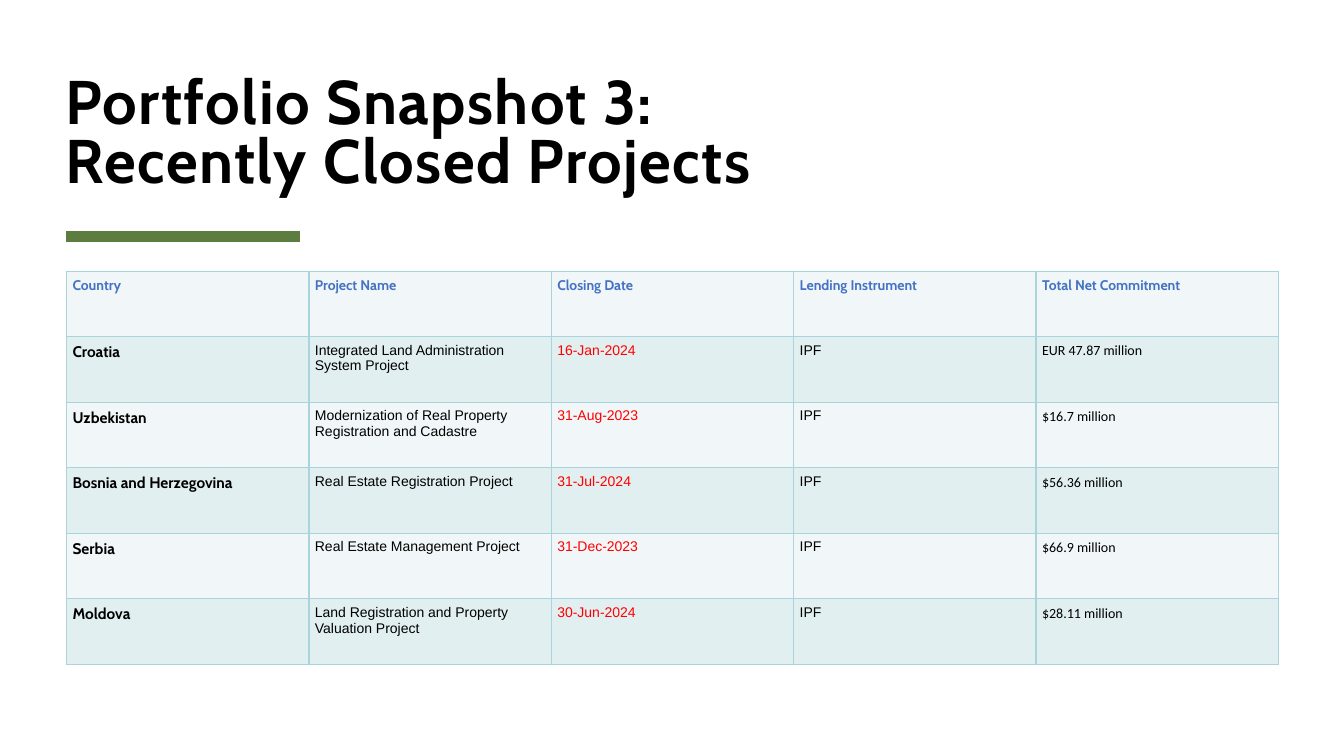
from dataclasses import dataclass

from lxml import etree
from pptx import Presentation
from pptx.dml.color import RGBColor
from pptx.enum.shapes import MSO_CONNECTOR
from pptx.enum.text import MSO_ANCHOR, MSO_AUTO_SIZE, PP_ALIGN
from pptx.oxml import parse_xml
from pptx.oxml.ns import nsdecls, qn
from pptx.slide import Slide
from pptx.table import _Cell
from pptx.util import Inches, Pt

STRAIGHT = MSO_CONNECTOR.STRAIGHT
BOTTOM = MSO_ANCHOR.BOTTOM
LEFT = PP_ALIGN.LEFT
NO_AUTOFIT = MSO_AUTO_SIZE.NONE

BORDER = "A9D4DB"
ROW_FILLS = ("F1F7F8", "E2EFF1")
ROW_HEIGHT = 0.65
TABLE_WIDTH = 12.02
CELL_INSET = 0.06


@dataclass(frozen=True)
class TextStyle:
    """Describe the lettering of a paragraph."""

    font: str
    size: int
    color: str = "000000"
    bold: bool = False


@dataclass(frozen=True)
class Project:
    """Hold one closed project, in column order."""

    country: str
    name: str
    closing_date: str
    instrument: str
    commitment: str

    def values(self) -> tuple[str, ...]:
        """Return the texts of the project's row."""
        return (self.country, self.name, self.closing_date, self.instrument, self.commitment)


TITLE_STYLE = TextStyle("Cabin", 44, bold=True)
HEADER_STYLE = TextStyle("Cabin", 10, "4472C4", True)
COLUMN_STYLES = (
    TextStyle("Cabin", 11, bold=True),
    TextStyle("Arial", 10),
    TextStyle("Arial", 10, "FF0000"),
    TextStyle("Arial", 10),
    TextStyle("Calibri", 10),
)
HEADERS = ("Country", "Project Name", "Closing Date", "Lending Instrument", "Total Net Commitment")
PROJECTS = (
    Project("Croatia", "Integrated Land Administration System Project",
            "16-Jan-2024", "IPF", "EUR 47.87 million"),
    Project("Uzbekistan", "Modernization of Real Property Registration and Cadastre",
            "31-Aug-2023", "IPF", "$16.7 million"),
    Project("Bosnia and Herzegovina", "Real Estate Registration Project",
            "31-Jul-2024", "IPF", "$56.36 million"),
    Project("Serbia", "Real Estate Management Project",
            "31-Dec-2023", "IPF", "$66.9 million"),
    Project("Moldova", "Land Registration and Property Valuation Project",
            "30-Jun-2024", "IPF", "$28.11 million"),
)


def rgb(color: str) -> RGBColor:
    """Turn a hex string into a colour."""
    return RGBColor.from_string(color)


def style_paragraph(paragraph, style: TextStyle) -> None:
    """Apply a text style to a whole paragraph."""
    paragraph.alignment = LEFT
    font = paragraph.font
    font.name = style.font
    font.size = Pt(style.size)
    font.bold = style.bold
    font.color.rgb = rgb(style.color)


def add_title(slide: Slide) -> None:
    """Place and format the title."""
    title = slide.shapes.title
    title.left, title.top = Inches(0.65), Inches(0.64)
    title.width, title.height = Inches(12), Inches(1.3)
    frame = title.text_frame
    frame.text = "Portfolio Snapshot 3:\vRecently Closed Projects"
    frame.word_wrap = True
    frame.auto_size = NO_AUTOFIT
    frame.vertical_anchor = BOTTOM
    frame.margin_left = frame.margin_right = frame.margin_top = frame.margin_bottom = 0
    heading = frame.paragraphs[0]
    style_paragraph(heading, TITLE_STYLE)
    heading.line_spacing = 0.8
    for run in heading.runs:
        run._r.get_or_add_rPr().set("spc", "100")


def add_accent_rule(slide: Slide) -> None:
    """Draw the green rule below the title."""
    rule = slide.shapes.add_connector(
        STRAIGHT, Inches(0.65), Inches(2.35), Inches(2.98), Inches(2.35))
    rule.line.color.rgb = rgb("5D7D40")
    rule.line.width = Pt(8)
    etree.SubElement(rule._element.spPr, qn("a:effectLst"))


def add_borders(cell: _Cell) -> None:
    """Outline all four sides of a cell."""
    properties = cell._tc.get_or_add_tcPr()
    for position, side in enumerate(("lnL", "lnR", "lnT", "lnB")):
        properties.insert(position, parse_xml(
            f'<a:{side} {nsdecls("a")} w="{Pt(1)}"><a:solidFill>'
            f'<a:srgbClr val="{BORDER}"/></a:solidFill></a:{side}>'))


def fill_cell(cell: _Cell, text: str, style: TextStyle, fill: str) -> None:
    """Write and format one table cell."""
    cell.text = text
    cell.margin_left = cell.margin_right = Inches(CELL_INSET)
    cell.margin_top = cell.margin_bottom = Inches(CELL_INSET)
    cell.fill.solid()
    cell.fill.fore_color.rgb = rgb(fill)
    style_paragraph(cell.text_frame.paragraphs[0], style)
    add_borders(cell)


def add_project_table(slide: Slide) -> None:
    """Build the table of closed projects."""
    rows = [HEADERS, *(project.values() for project in PROJECTS)]
    table = slide.shapes.add_table(
        len(rows), len(HEADERS), Inches(0.66), Inches(2.69),
        Inches(TABLE_WIDTH), Inches(ROW_HEIGHT * len(rows))).table
    table.first_row = table.horz_banding = False
    for row_index, values in enumerate(rows):
        fill = ROW_FILLS[row_index % len(ROW_FILLS)]
        for column_index, value in enumerate(values):
            style = COLUMN_STYLES[column_index] if row_index else HEADER_STYLE
            fill_cell(table.cell(row_index, column_index), value, style, fill)


def main() -> None:
    """Create and save the slide."""
    presentation = Presentation()
    presentation.slide_width = Inches(13.33)
    presentation.slide_height = Inches(7.5)
    slide = presentation.slides.add_slide(presentation.slide_layouts[5])
    add_accent_rule(slide)
    add_title(slide)
    add_project_table(slide)
    presentation.save("out.pptx")


if __name__ == "__main__":
    main()
